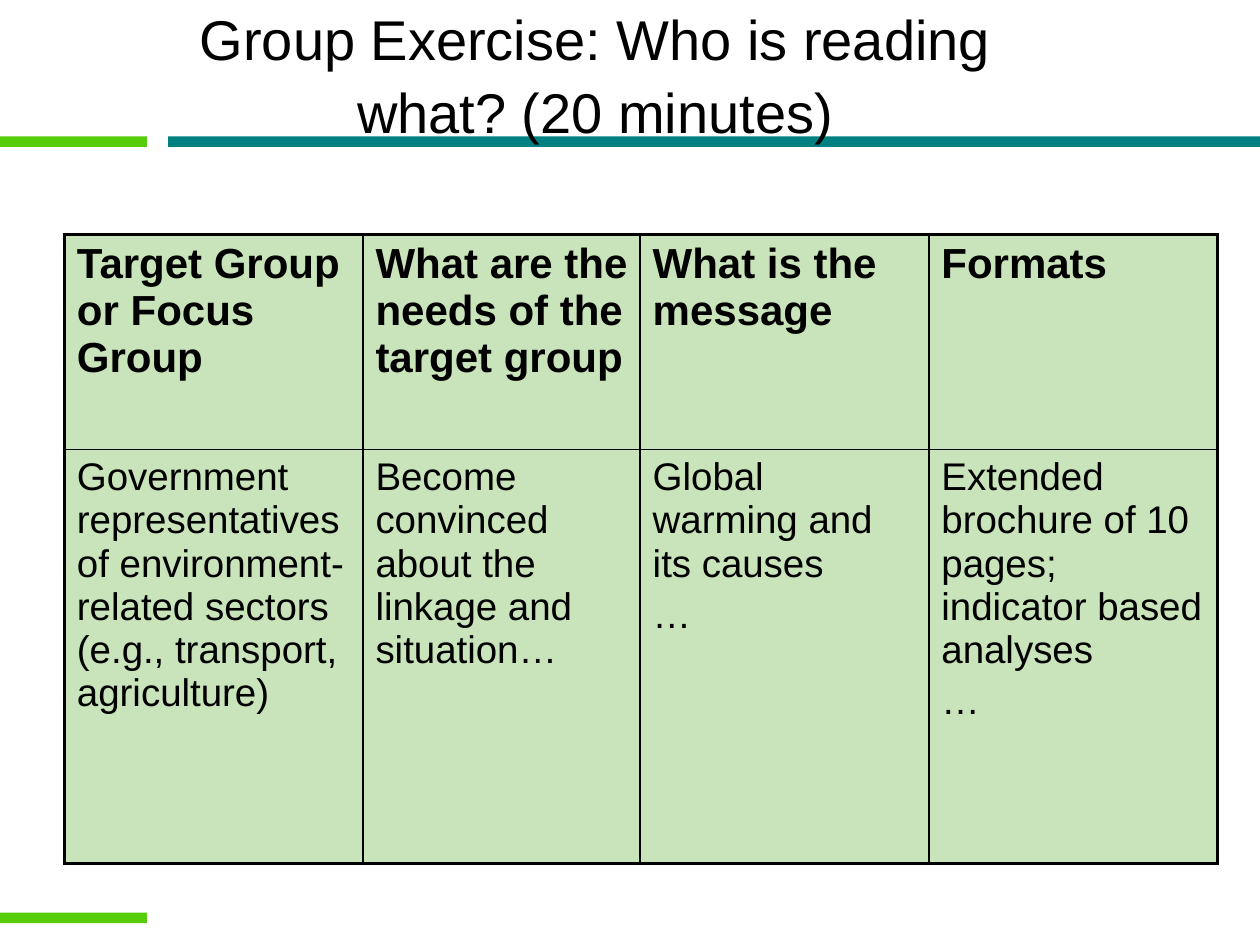
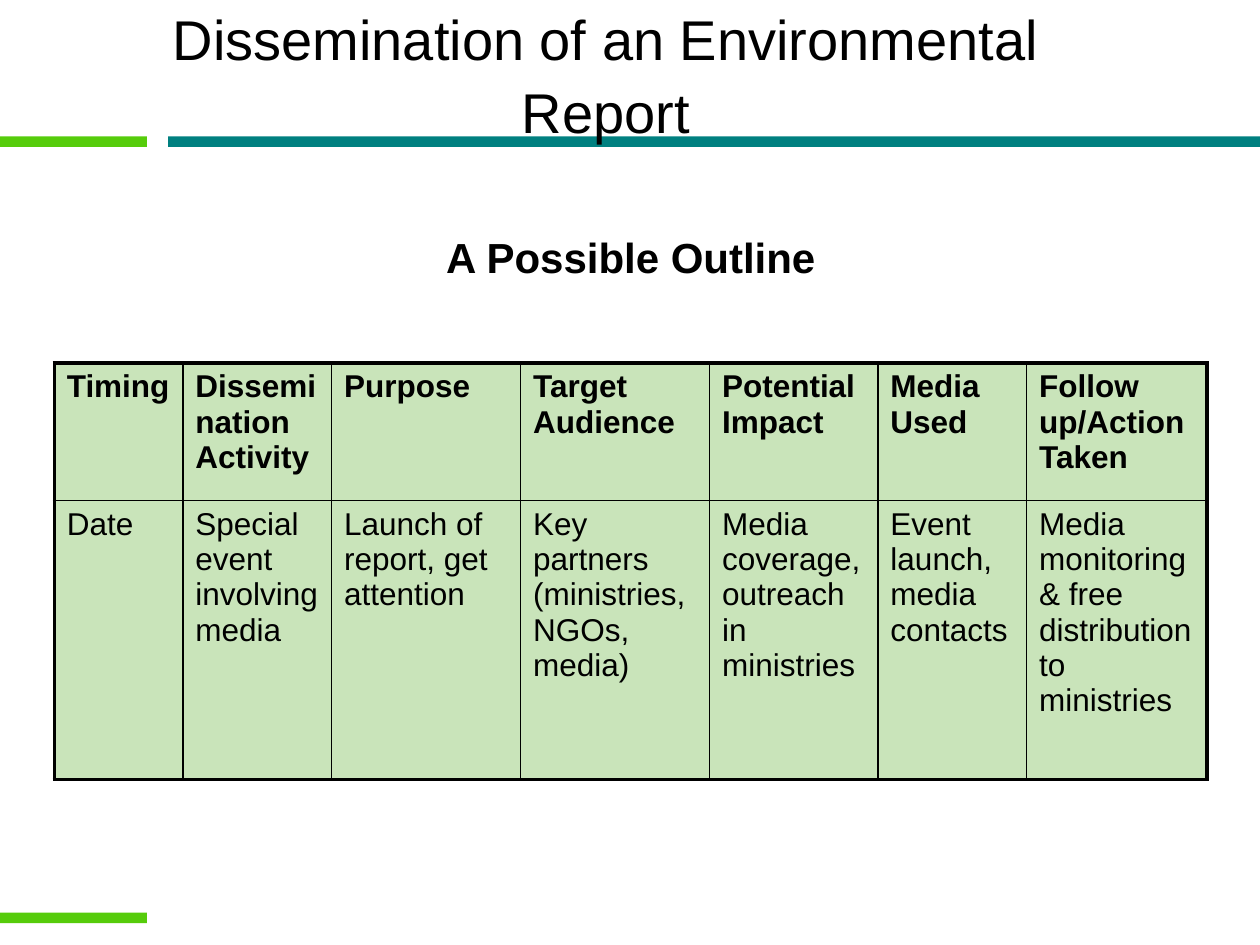
from dataclasses import dataclass

from lxml import etree
from pptx import Presentation
from pptx import util as u
from pptx.dml import color
from pptx.enum import shapes, text
from pptx.oxml import ns


@dataclass(frozen=True)
class Theme:
    """Colours, font, type sizes and line widths of the deck."""

    font: str = "Arial"
    ink: str = "000000"
    teal: str = "008080"
    green: str = "56CC0B"
    cell: str = "C9E4BA"
    title_size: float = 32
    heading_size: float = 24
    inner_line: float = 1
    outer_line: float = 2.25
    title_leading: float = 1.09
    paragraph_gap: float = 5


def apply(target, values):
    """Set each named format value on the target."""
    for name, value in values.items():
        setattr(target, name, value)


class Deck:
    """Hold the theme and the current slide, and draw each kind of element."""

    def __init__(self, theme):
        """Start an empty 10 by 7.5 inch presentation."""
        self.theme = theme
        self.presentation = Presentation()
        apply(self.presentation, {"slide_width": u.Pt(720), "slide_height": u.Pt(540)})
        self.layout = self.presentation.slide_layouts.get_by_name("Title Only")
        self.slide = None

    def new_slide(self):
        """Add a slide, and give the layout its bands the first time."""
        self.slide = self.presentation.slides.add_slide(self.layout)
        if len(self.presentation.slides) == 1:
            self.layout_band(96, 78, 624, self.theme.teal)
            for top in (78, 521.5):
                self.layout_band(0, top, 84, self.theme.green)

    def layout_band(self, left, top, width, fill):
        """Draw one thin band and move it to the shared layout."""
        box = map(u.Pt, (left, top, width, 6))
        band = self.slide.shapes.add_shape(shapes.MSO_SHAPE.RECTANGLE, *box)
        band.shadow.inherit = False
        band.fill.solid()
        band.fill.fore_color.rgb = color.RGBColor.from_string(fill)
        band.line.fill.background()
        self.layout.shapes.element.append(band.element)

    def fill_text(self, frame, content, size, bold=False, **paragraph_format):
        """Fill a text frame with one paragraph per line of content."""
        frame.text = content
        for index, paragraph in enumerate(frame.paragraphs):
            gap = self.theme.paragraph_gap if index else 0
            apply(paragraph, {"space_before": u.Pt(gap), **paragraph_format})
            font = paragraph.runs[0].font
            apply(font, {"name": self.theme.font, "size": u.Pt(size), "bold": bold})
            font.color.rgb = color.RGBColor.from_string(self.theme.ink)

    def title(self, content, left, width):
        """Place and fill the title placeholder."""
        shape = self.slide.shapes.title
        apply(shape, {"left": u.Pt(left), "top": u.Pt(15), "width": u.Pt(width), "height": u.Pt(52)})
        self.fill_text(shape.text_frame, content, self.theme.title_size,
                       alignment=text.PP_ALIGN.CENTER, line_spacing=self.theme.title_leading)
        apply(shape.text_frame, {"auto_size": text.MSO_AUTO_SIZE.NONE, "word_wrap": True,
                                 "vertical_anchor": text.MSO_ANCHOR.MIDDLE})

    def heading(self, content, left, top, width, height):
        """Add a centred bold heading."""
        shape = self.slide.shapes.add_textbox(*map(u.Pt, (left, top, width, height)))
        self.fill_text(shape.text_frame, content, self.theme.heading_size, bold=True,
                       alignment=text.PP_ALIGN.CENTER)
        apply(shape.text_frame, {"word_wrap": True, "auto_size": text.MSO_AUTO_SIZE.SHAPE_TO_FIT_TEXT})

    def border(self, cell, outer_sides):
        """Draw the four cell borders, heavier on the outer sides."""
        properties = cell._tc.get_or_add_tcPr()
        for side in "LRTB":
            width = self.theme.outer_line if side in outer_sides else self.theme.inner_line
            line = etree.SubElement(properties, ns.qn(f"a:ln{side}"), w=str(u.Pt(width)))
            fill = etree.SubElement(line, ns.qn("a:solidFill"))
            etree.SubElement(fill, ns.qn("a:srgbClr"), val=self.theme.ink)

    def table(self, left, top, widths, heights, rows, sizes):
        """Add a framed table with a bold first row."""
        box = map(u.Pt, (left, top, sum(widths), sum(heights)))
        table = self.slide.shapes.add_table(len(rows), len(widths), *box).table
        apply(table, {"first_row": False, "horz_banding": False})
        for column, width in zip(table.columns, widths):
            column.width = u.Pt(width)
        for r, (row, height, size) in enumerate(zip(rows, heights, sizes)):
            table.rows[r].height = u.Pt(height)
            for c, content in enumerate(row):
                cell = table.cell(r, c)
                edges = {"L": c == 0, "R": c == len(row) - 1, "T": r == 0, "B": r == len(rows) - 1}
                self.border(cell, [side for side, outer in edges.items() if outer])
                cell.fill.solid()
                cell.fill.fore_color.rgb = color.RGBColor.from_string(self.theme.cell)
                self.fill_text(cell.text_frame, content, size, bold=r == 0)


EXERCISE_ROWS = [
    ["Target Group or Focus Group", "What are the needs of the target group",
     "What is the message", "Formats"],
    ["Government representatives of environment-related sectors (e.g., transport, agriculture)",
     "Become convinced about the linkage and situation…",
     "Global warming and its causes\n…",
     "Extended brochure of 10 pages; indicator based analyses\n…"],
]

OUTLINE_ROWS = [
    ["Timing", "Dissemination Activity", "Purpose", "Target Audience",
     "Potential Impact", "Media Used", "Follow up/Action Taken"],
    ["Date", "Special event involving media", "Launch of report, get attention",
     "Key partners (ministries, NGOs, media)", "Media coverage, outreach in ministries",
     "Event launch, media contacts", "Media monitoring& free distribution to ministries"],
]


def main():
    """Build both slides and save them."""
    deck = Deck(Theme())

    deck.new_slide()
    deck.title("Group Exercise: Who is reading what? (20 minutes)", 62, 556.5)
    deck.table(36.8, 134, [170.6, 158.4, 165, 165], [123, 236.5], EXERCISE_ROWS, [24, 22])

    deck.new_slide()
    deck.title("Dissemination of an Environmental Report", 73.5, 545.5)
    deck.table(31, 207.5, [73.5, 85, 108, 108, 96.2, 85, 103], [78.5, 159.5], OUTLINE_ROWS, [18, 18])
    deck.heading("A Possible Outline", 57, 128.5, 607, 36)

    deck.presentation.save("out.pptx")


if __name__ == "__main__":
    main()
